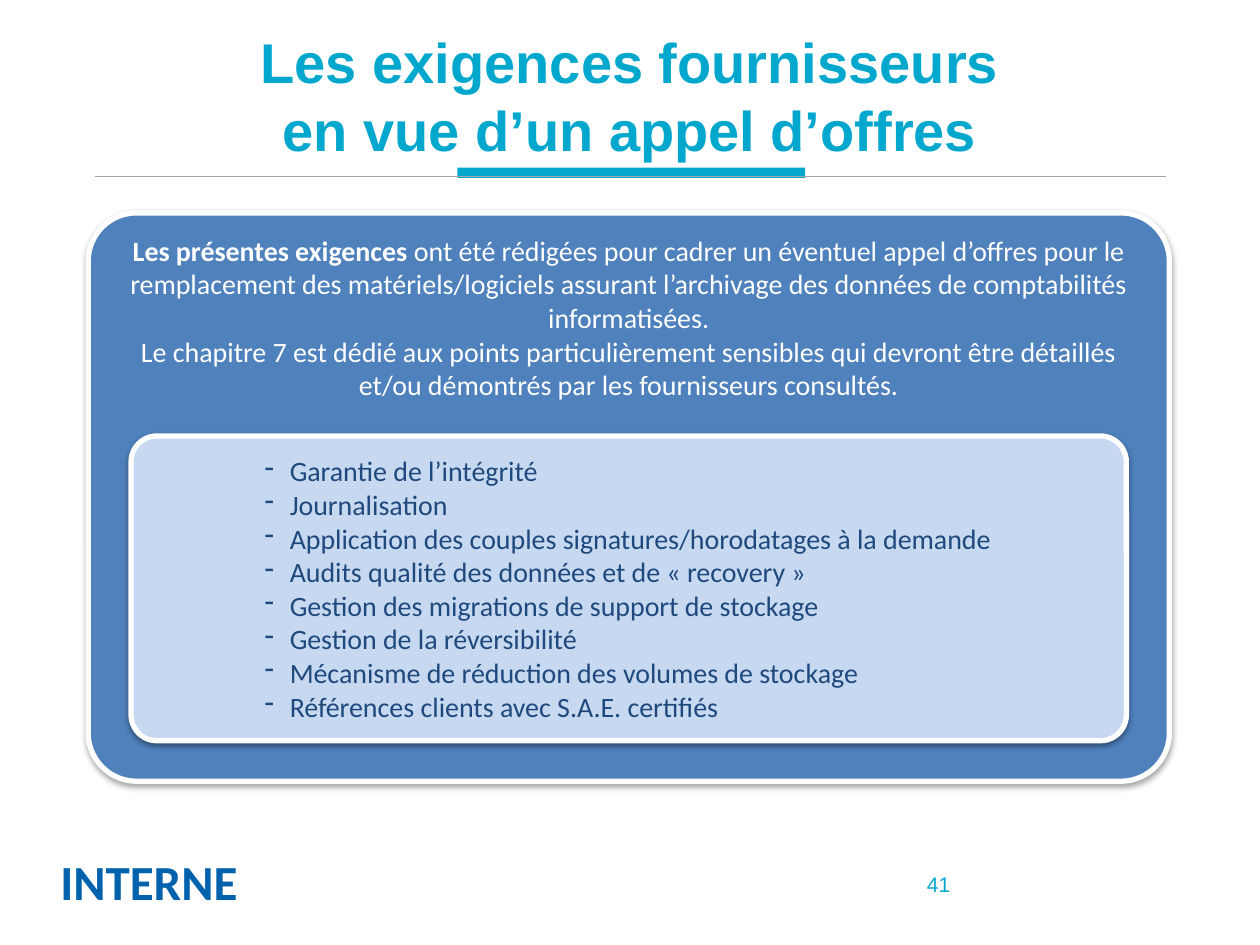
"""Build the slide on supplier requirements for a call for tenders."""
from dataclasses import dataclass

from lxml import etree
from pptx import Presentation
from pptx.dml.color import RGBColor
from pptx.enum.shapes import MSO_CONNECTOR, MSO_SHAPE
from pptx.enum.text import MSO_ANCHOR, MSO_AUTO_SIZE, PP_ALIGN
from pptx.oxml.ns import qn
from pptx.util import Pt

RECT, ROUND = MSO_SHAPE.RECTANGLE, MSO_SHAPE.ROUNDED_RECTANGLE
LINE = MSO_CONNECTOR.STRAIGHT
TOP, MIDDLE = MSO_ANCHOR.TOP, MSO_ANCHOR.MIDDLE
LEFT, CENTER, RIGHT = PP_ALIGN.LEFT, PP_ALIGN.CENTER, PP_ALIGN.RIGHT
NO_FIT = MSO_AUTO_SIZE.NONE

CYAN, WHITE = "02A7CE", "FFFFFF"
TITLE = "Les exigences fournisseurs\ven vue d’un appel d’offres"
LEAD = "Les présentes exigences "
INTRO = [
    "ont été rédigées pour cadrer un éventuel appel d’offres pour le "
    "remplacement des matériels/logiciels assurant l’archivage des données "
    "de comptabilités informatisées.",
    "Le chapitre 7 est dédié aux points particulièrement sensibles qui "
    "devront être détaillés et/ou démontrés par les fournisseurs consultés.",
]
POINTS = [
    "Garantie de l’intégrité",
    "Journalisation",
    "Application des couples signatures/horodatages à la demande",
    "Audits qualité des données et de « recovery »",
    "Gestion des migrations de support de stockage",
    "Gestion de la réversibilité",
    "Mécanisme de réduction des volumes de stockage",
    "Références clients avec S.A.E. certifiés",
]


@dataclass
class Box:
    left: float
    top: float
    width: float
    height: float

    def area(self) -> tuple:
        return tuple(Pt(n) for n in (self.left, self.top, self.width, self.height))


@dataclass
class Style:
    size: float
    color: str
    face: str = "Calibri"
    bold: bool = False
    align: PP_ALIGN = LEFT


@dataclass
class Card:
    box: Box
    fill: str
    drop: float
    alpha: int
    anchor: MSO_ANCHOR


def paint(form, color: str) -> None:
    if hasattr(form, "solid"):
        form.solid()
        form = form.fore_color
    form.rgb = RGBColor.from_string(color)


def format_text(para, style: Style) -> None:
    para.alignment = style.align
    font = para.font
    font.name, font.size, font.bold = style.face, Pt(style.size), style.bold
    paint(font.color, style.color)


def add_label(slide, box: Box, text: str, style: Style, anchor=TOP, wrap=True) -> None:
    frame = slide.shapes.add_textbox(*box.area()).text_frame
    frame.word_wrap, frame.vertical_anchor = wrap, anchor
    frame.text = text
    format_text(frame.paragraphs[0], style)


def add_shadow(shape, drop: float, alpha: int) -> None:
    effects = etree.SubElement(shape._element.spPr, qn("a:effectLst"))
    outer = etree.SubElement(
        effects, qn("a:outerShdw"), blurRad=str(Pt(3.1)), dist=str(Pt(drop)),
        dir="5400000", rotWithShape="0")
    color = etree.SubElement(outer, qn("a:srgbClr"), val="000000")
    etree.SubElement(color, qn("a:alpha"), val=str(alpha * 1000))


def add_card(slide, card: Card, lines: list, style: Style):
    shape = slide.shapes.add_shape(ROUND, *card.box.area())
    shape.adjustments[0] = 0.085
    paint(shape.fill, card.fill)
    paint(shape.line.color, WHITE)
    shape.line.width = Pt(3)
    add_shadow(shape, card.drop, card.alpha)
    frame = shape.text_frame
    frame.word_wrap, frame.vertical_anchor = True, card.anchor
    frame.text = "\n".join(lines)
    for para in frame.paragraphs:
        format_text(para, style)
    return frame


def add_dash(para) -> None:
    props = para._p.get_or_add_pPr()
    props.set("marL", str(Pt(14.4)))
    props.set("indent", str(Pt(-14.4)))
    bullet = etree.Element(qn("a:buChar"), char="-")
    props.insert(0, bullet)


def add_title(slide) -> None:
    title = slide.shapes.title
    title.left, title.top, title.width, title.height = Box(36, 9.4, 648, 90).area()
    frame = title.text_frame
    frame.auto_size, frame.vertical_anchor = NO_FIT, MIDDLE
    frame.text = TITLE
    format_text(frame.paragraphs[0], Style(32, CYAN, "Arial", True, CENTER))


def add_rule(slide) -> None:
    bar = slide.shapes.add_shape(RECT, *Box(261.4, 95.8, 198.7, 5.8).area())
    bar.shadow.inherit = False
    paint(bar.fill, CYAN)
    bar.line.fill.background()
    rule = slide.shapes.add_connector(LINE, Pt(54), Pt(100.8), Pt(666), Pt(100.8))
    paint(rule.line.color, "A6A6A6")
    rule.line.width = Pt(0.75)
    etree.SubElement(rule._element.spPr, qn("a:effectLst"))


def main() -> None:
    deck = Presentation()
    deck.slide_width, deck.slide_height = Pt(720), Pt(540)
    slide = deck.slides.add_slide(deck.slide_layouts[5])
    add_rule(slide)
    add_label(slide, Box(27.4, 483, 116.6, 41), "INTERNE",
              Style(28, "0062AC", bold=True), wrap=False)
    add_title(slide)
    add_label(slide, Box(382.3, 491, 167.8, 28.8), "41",
              Style(12, CYAN, "Arial", align=RIGHT), MIDDLE)

    outer = Card(Box(50.4, 121.7, 617.8, 324.7), "4F81BD", 1.8, 35, TOP)
    intro = add_card(slide, outer, INTRO, Style(16, WHITE, align=CENTER))
    first = intro.paragraphs[0]
    body = first.runs[0]
    body.text = LEAD
    body.font.bold = True
    first.add_run().text = INTRO[0]

    inner = Card(Box(74.9, 249.1, 568.8, 174.2), "C6D9F1", 1.6, 38, MIDDLE)
    points = add_card(slide, inner, POINTS, Style(16, "1F497D"))
    points.margin_left = Pt(72)
    for para in points.paragraphs:
        add_dash(para)
    deck.save("out.pptx")


if __name__ == "__main__":
    main()
